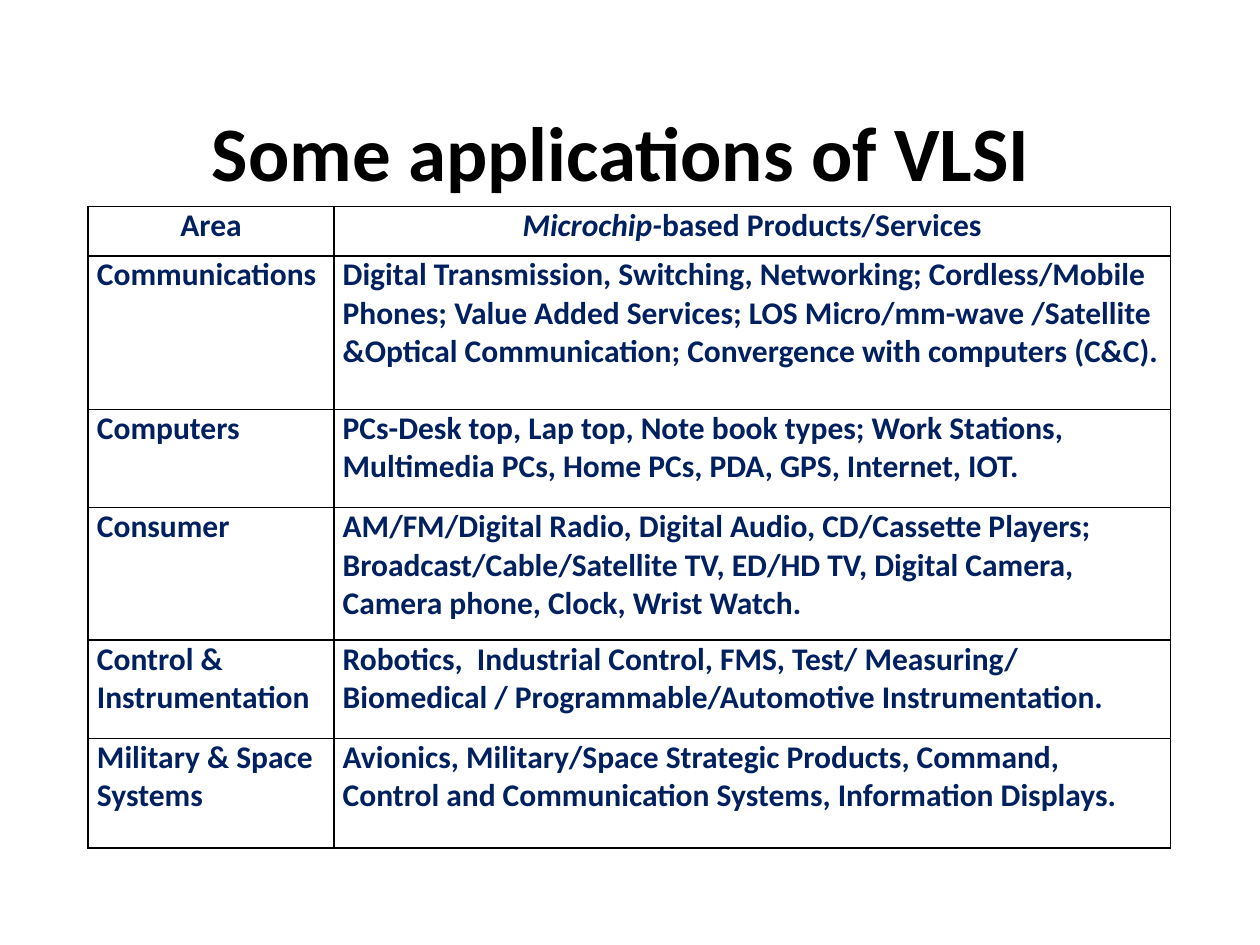
from dataclasses import dataclass

from lxml.etree import SubElement
from pptx import Presentation
from pptx.dml.color import RGBColor
from pptx.enum.text import PP_ALIGN as Align
from pptx.oxml.ns import qn
from pptx.slide import Slide
from pptx.table import _Cell as Cell
from pptx.util import Inches, Pt

BLACK = RGBColor(0x00, 0x00, 0x00)
NAVY = RGBColor(0x00, 0x20, 0x60)
FONT = "Calibri"
COLUMN_WIDTHS = (1.95, 6.64)


@dataclass(frozen=True)
class Application:
    area: str
    products: str
    height: float
    area_align: Align = Align.LEFT


HEADER_HEIGHT = 0.39
APPLICATIONS = (
    Application(
        "Communications ",
        "Digital Transmission, Switching, Networking; Cordless/Mobile Phones; "
        "Value Added Services; LOS Micro/mm-wave /Satellite &Optical "
        "Communication; Convergence with computers (C&C).",
        1.22, Align.JUSTIFY),
    Application(
        "Computers",
        "PCs-Desk top, Lap top, Note book types; Work Stations, Multimedia PCs, "
        "Home PCs, PDA, GPS, Internet, IOT.",
        0.78, Align.JUSTIFY),
    Application(
        "Consumer",
        "AM/FM/Digital Radio, Digital Audio, CD/Cassette Players; "
        "Broadcast/Cable/Satellite TV, ED/HD TV, Digital Camera, "
        "Camera phone, Clock, Wrist Watch.",
        1.05, Align.JUSTIFY),
    Application(
        "Control & Instrumentation",
        "Robotics,  Industrial Control, FMS, Test/ Measuring/ Biomedical / "
        "Programmable/Automotive Instrumentation.",
        0.78),
    Application(
        "Military & Space Systems",
        "Avionics, Military/Space Strategic Products, Command, Control and "
        "Communication Systems, Information Displays.",
        0.87),
)


def set_borders(cell: Cell) -> None:
    """Give the cell a thin black line on each side, and no fill."""
    properties = cell._tc.get_or_add_tcPr()
    for side in ("a:lnL", "a:lnR", "a:lnT", "a:lnB"):
        line = SubElement(properties, qn(side), w=str(Pt(1)))
        fill = SubElement(line, qn("a:solidFill"))
        SubElement(fill, qn("a:srgbClr"), val=str(BLACK))
    cell.fill.background()


def fill_cell(cell: Cell, text: str, align: Align, italic_text: str = "") -> None:
    """Write the text, after an optional italic lead-in."""
    cell.margin_left = cell.margin_right = Inches(0.07)
    cell.margin_top = cell.margin_bottom = 0
    para = cell.text_frame.paragraphs[0]
    para.alignment = align
    font = para.font
    font.name, font.size, font.bold = FONT, Pt(18), True
    font.color.rgb = NAVY
    if italic_text:
        span = para.add_run()
        span.text = italic_text
        span.font.italic = True
    para.add_run().text = text
    # Runs in a table take the table style unless they carry their own font.
    for span in para.runs:
        span.font.name, span.font.size, span.font.bold = FONT, Pt(18), True
        span.font.color.rgb = NAVY
    set_borders(cell)


def add_title(page: Slide, text: str) -> None:
    box = page.shapes.add_textbox(Inches(0.84), Inches(0.78), Inches(8.32), Inches(0.84))
    box.text_frame.word_wrap = True
    para = box.text_frame.paragraphs[0]
    para.text = text
    para.alignment = Align.CENTER
    font = para.font
    font.name, font.size, font.bold = FONT, Pt(44), True
    font.color.rgb = BLACK


def add_applications(page: Slide) -> None:
    heights = [HEADER_HEIGHT, *(item.height for item in APPLICATIONS)]
    table = page.shapes.add_table(
        len(heights), len(COLUMN_WIDTHS), Inches(0.7), Inches(1.64),
        Inches(sum(COLUMN_WIDTHS)), Inches(sum(heights))).table
    table.first_row = table.horz_banding = False
    for column, width in zip(table.columns, COLUMN_WIDTHS):
        column.width = Inches(width)
    for row, height in zip(table.rows, heights):
        row.height = Inches(height)

    fill_cell(table.cell(0, 0), "Area", Align.CENTER)
    fill_cell(table.cell(0, 1), "based Products/Services", Align.CENTER, "Microchip-")
    for index, item in enumerate(APPLICATIONS, start=1):
        fill_cell(table.cell(index, 0), item.area, item.area_align)
        fill_cell(table.cell(index, 1), item.products, Align.LEFT)


def main() -> None:
    deck = Presentation()
    deck.slide_width, deck.slide_height = Inches(10), Inches(7.5)
    page = deck.slides.add_slide(deck.slide_layouts[6])
    add_applications(page)
    add_title(page, "Some applications of VLSI ")
    deck.save("out.pptx")


if __name__ == "__main__":
    main()
